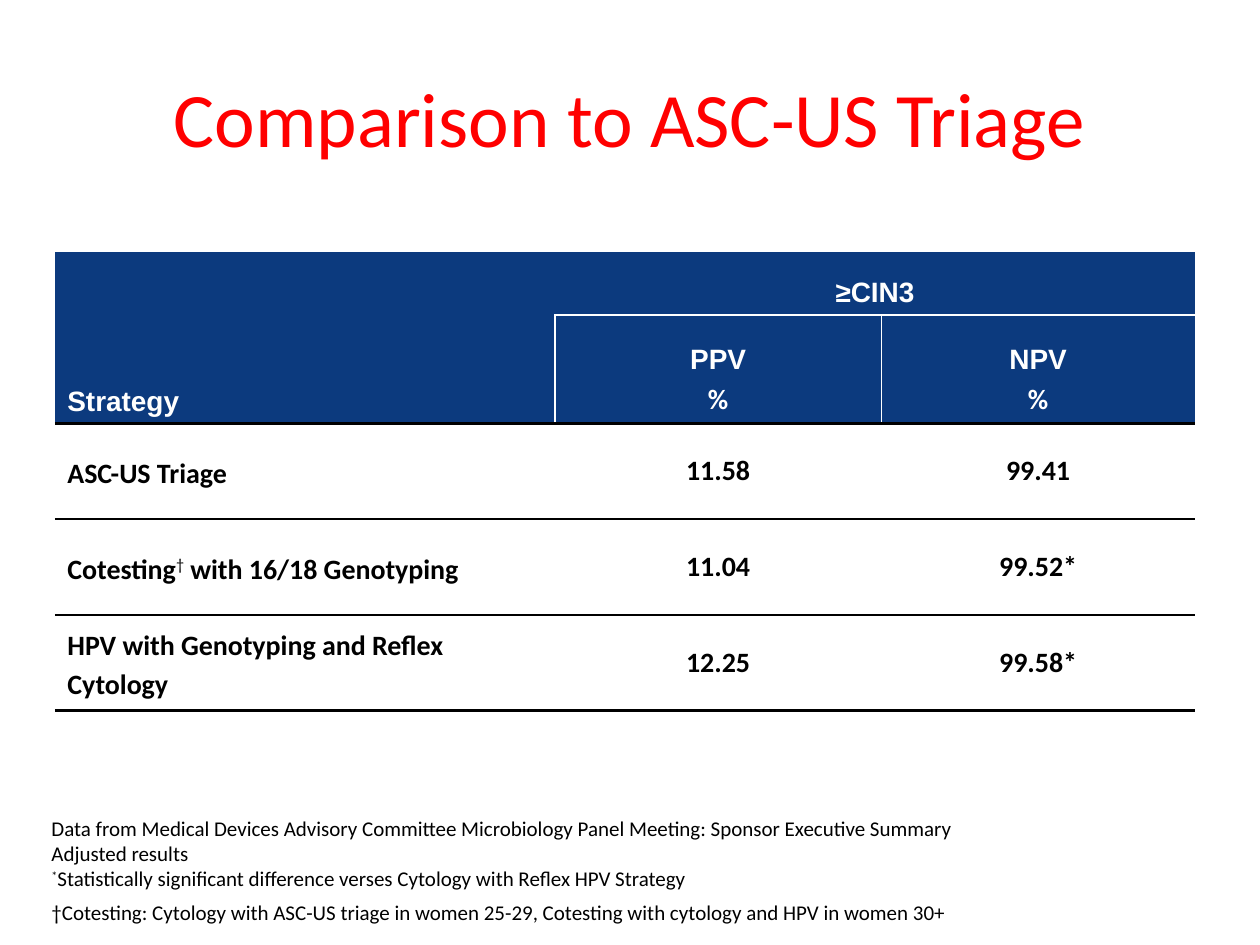
from lxml import etree
from pptx import Presentation
from pptx.dml.color import RGBColor
from pptx.enum.text import MSO_ANCHOR, PP_ALIGN
from pptx.oxml.ns import qn
from pptx.util import Inches, Pt

LEFT, CENTER = PP_ALIGN.LEFT, PP_ALIGN.CENTER
TOP, MIDDLE, BOTTOM = MSO_ANCHOR.TOP, MSO_ANCHOR.MIDDLE, MSO_ANCHOR.BOTTOM

THEME = {
    "body_font": "Calibri", "header_font": "Arial",
    "title_color": "FF0000", "text_color": "000000",
    "header_fill": "0C3A7E", "header_text": "FFFFFF",
    "title_size": 44, "table_size": 16, "note_size": 12,
    "thin": 1, "thick": 2.25,
    "plain_style": "{2D5ABB26-0587-4C30-8999-92F81FD0307C}",
}

SLIDE_W, SLIDE_H = 10, 7.5
TITLE = "Comparison to ASC-US Triage"
STRATEGY, OUTCOME = "Strategy", "≥CIN3"
MEASURES, UNIT = ["PPV", "NPV"], "%"
# A label is text, or a list of pieces; a (mark,) tuple is a superscript.
RESULTS = [
    ("ASC-US Triage", "11.58", "99.41"),
    (["Cotesting", ("†",), " with 16/18 Genotyping"], "11.04", "99.52*"),
    ("HPV with Genotyping and Reflex Cytology", "12.25", "99.58*"),
]
NOTES = [
    "Data from Medical Devices Advisory Committee Microbiology Panel Meeting: Sponsor Executive Summary",
    "Adjusted results",
    [("*",), "Statistically significant difference verses Cytology with Reflex HPV Strategy"],
]
COTESTING_NOTE = ("†Cotesting: Cytology with ASC-US triage in women 25-29, "
                  "Cotesting with cytology and HPV in women 30+")

TITLE_BOX = (0.05, 0.04, 0.9, 1 / 6)  # shares of the slide's size
NOTES_BOX = (0.031, 0.856, 0.811, 0.13)
TABLE_LEFT, TABLE_TOP = 0.0435, 0.2667
COLUMNS = [3.97, 2.59, 2.49]
ROWS = [0.5, 0.86] + [0.76] * len(RESULTS)


def add_text(frame, content, first=False, size=THEME["table_size"], color=THEME["text_color"],
             font=THEME["body_font"], bold=False, align=LEFT, line=None, gap=0):
    """Write one paragraph; gap is the space before and after in points."""
    paragraph = frame.paragraphs[0] if first else frame.add_paragraph()
    paragraph.alignment = align
    if line:
        paragraph.line_spacing = line
    paragraph.space_before, paragraph.space_after = Pt(0 if first else gap), Pt(gap)
    for piece in [content] if isinstance(content, str) else content:
        raised = isinstance(piece, tuple)
        run = paragraph.add_run()
        run.text = piece[0] if raised else piece
        run.font.size, run.font.name = Pt(size), font
        run.font.bold = bold and not raised
        run.font.color.rgb = RGBColor.from_string(color)
        if raised:
            run.font._element.set("baseline", "30000")


def add_box(slide, shares, anchor, wrap):
    x, y, w, h = shares
    box = slide.shapes.add_textbox(Inches(x * SLIDE_W), Inches(y * SLIDE_H),
                                   Inches(w * SLIDE_W), Inches(h * SLIDE_H))
    box.text_frame.word_wrap = wrap
    box.text_frame.vertical_anchor = anchor
    return box.text_frame


def style_cell(cell, anchor, fill=None, **borders):
    """Set anchor, borders given as L, T or B = (color, width), and fill."""
    cell.vertical_anchor = anchor
    properties = cell._tc.get_or_add_tcPr()
    for side in "LTB":
        if side in borders:
            color, width = borders[side]
            edge = etree.SubElement(properties, qn(f"a:ln{side}"), w=str(Pt(width)))
            solid = etree.SubElement(edge, qn("a:solidFill"))
            etree.SubElement(solid, qn("a:srgbClr"), val=color)
    if fill:
        cell.fill.solid()
        cell.fill.fore_color.rgb = RGBColor.from_string(fill)
    else:
        cell.fill.background()


def add_results_table(slide):
    table = slide.shapes.add_table(
        len(ROWS), len(COLUMNS), Inches(TABLE_LEFT * SLIDE_W), Inches(TABLE_TOP * SLIDE_H),
        Inches(sum(COLUMNS)), Inches(sum(ROWS))).table
    table.first_row = table.horz_banding = False
    table._tbl.tblPr.find(qn("a:tableStyleId")).text = THEME["plain_style"]
    for column, width in zip(table.columns, COLUMNS):
        column.width = Inches(width)
    for row, height in zip(table.rows, ROWS):
        row.height = Inches(height)

    thin, thick = [(THEME["text_color"], THEME[name]) for name in ("thin", "thick")]
    white = (THEME["header_text"], THEME["thin"])
    header = dict(color=THEME["header_text"], bold=True, gap=2)
    arial = THEME["header_font"]

    table.cell(0, 0).merge(table.cell(1, 0))
    table.cell(0, 1).merge(table.cell(0, 2))
    for column in range(len(COLUMNS)):
        edges = {"B": white if column else thick}
        style_cell(table.cell(0, column), BOTTOM, THEME["header_fill"], **edges)
        edges = {"T": white} if column else {}
        if column == 1:
            edges["L"] = white
        style_cell(table.cell(1, column), BOTTOM, THEME["header_fill"], B=thick, **edges)
    add_text(table.cell(0, 0).text_frame, STRATEGY, True, font=arial, line=1.15, **header)
    add_text(table.cell(0, 1).text_frame, OUTCOME, True, font=arial, align=CENTER, **header)
    for column, measure in enumerate(MEASURES, 1):
        frame = table.cell(1, column).text_frame
        add_text(frame, measure, True, font=arial, align=CENTER, **header)
        add_text(frame, UNIT, align=CENTER, **header)

    for row, result in enumerate(RESULTS, 2):
        top = thick if row == 2 else thin
        bottom = thick if row == len(ROWS) - 1 else thin
        for column, content in enumerate(result):
            cell = table.cell(row, column)
            style_cell(cell, MIDDLE, T=top, B=bottom)
            add_text(cell.text_frame, content, True, bold=True, gap=0 if column else 2,
                     line=None if column else 1.15, align=CENTER if column else LEFT)


def main():
    deck = Presentation()
    deck.slide_width, deck.slide_height = Inches(SLIDE_W), Inches(SLIDE_H)
    slide = deck.slides.add_slide(deck.slide_layouts[6])
    add_text(add_box(slide, TITLE_BOX, MIDDLE, True), TITLE, True, align=CENTER,
             size=THEME["title_size"], color=THEME["title_color"])
    add_results_table(slide)
    notes = add_box(slide, NOTES_BOX, TOP, False)
    for index, note in enumerate(NOTES):
        add_text(notes, note, index == 0, size=THEME["note_size"])
    add_text(notes, COTESTING_NOTE, size=THEME["note_size"], line=0.95, gap=6)
    deck.save("out.pptx")


if __name__ == "__main__":
    main()
